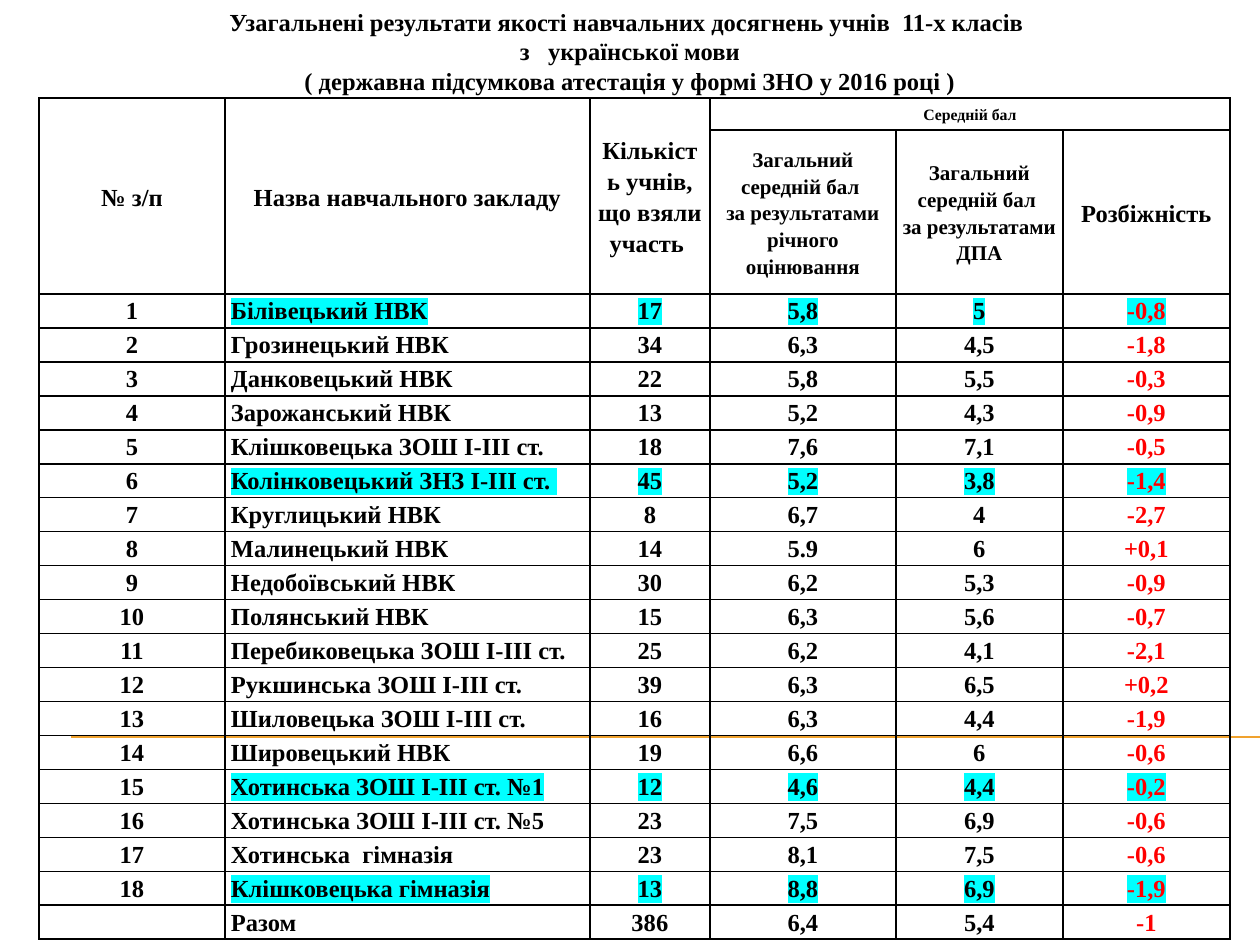
from lxml.etree import SubElement
from pptx import Presentation
from pptx.dml.color import RGBColor
from pptx.enum.shapes import MSO_CONNECTOR as CONN
from pptx.enum.text import MSO_ANCHOR as ANCHOR, PP_ALIGN as ALIGN
from pptx.oxml.ns import qn
from pptx.util import Emu, Pt


def px(n):
    return Emu(round(n * 914400 / 126))


def write(tf, text, size=14, color="000000", align=ALIGN.CENTER, spacing=1.15, mark=False):
    for i, line in enumerate(text.split("\n")):
        p = tf.paragraphs[0] if i == 0 else tf.add_paragraph()
        p.alignment, p.line_spacing = align, spacing
        if not line:
            SubElement(p._p, qn("a:endParaRPr"), sz=str(size * 100))
            continue
        r = p.add_run()
        r.text = line
        for key, value in {"name": "Times New Roman", "size": Pt(size), "bold": True}.items():
            setattr(r.font, key, value)
        r.font.color.rgb = RGBColor.from_string(color)
        if mark:
            rPr = r._r.get_or_add_rPr()
            hl = SubElement(rPr, qn("a:highlight"))
            SubElement(hl, qn("a:srgbClr"), val="00FFFF")
            rPr.find(qn("a:solidFill")).addnext(hl)


prs = Presentation()
prs.slide_width, prs.slide_height = px(1260), px(945)
s = prs.slides.add_slide(prs.slide_layouts[6])

rule = s.shapes.add_connector(CONN.STRAIGHT, px(71), px(737), px(1260), px(737))
rule.line.color.rgb = RGBColor.from_string("F0A22E")
rule.line.width = Pt(0.75)
SubElement(rule._element.spPr, qn("a:effectLst"))

title = s.shapes.add_textbox(0, 0, px(1260), px(102))
tf = title.text_frame
tf.word_wrap = True
tf.vertical_anchor = ANCHOR.MIDDLE
write(tf, "Узагальнені результати якості навчальних досягнень учнів  11-х класів \n"
          "з   української мови\n"
          "( державна підсумкова атестація у формі ЗНО у 2016 році )", spacing=1.0)

headers = [
    (0, 0, "№ з/п", 14),
    (0, 1, "Назва навчального закладу", 14),
    (0, 2, "Кількість учнів, що взяли участь ", 14),
    (0, 3, "Середній бал", 9),
    (1, 3, "Загальний середній бал \nза результатами річного оцінювання", 12),
    (1, 4, "Загальний середній бал \nза результатами ДПА", 12),
    (1, 5, "Розбіжність", 14),
]
schools = [
    ("1", "Білівецький НВК", "17", "5,8", "5", "-0,8"),
    ("2", "Грозинецький НВК", "34", "6,3", "4,5", "-1,8"),
    ("3", "Данковецький НВК", "22", "5,8", "5,5", "-0,3"),
    ("4", "Зарожанський НВК", "13", "5,2", "4,3", "-0,9"),
    ("5", "Клішковецька ЗОШ І-ІІІ ст.", "18", "7,6", "7,1", "-0,5"),
    ("6", "Колінковецький ЗНЗ І-ІІІ ст. ", "45", "5,2", "3,8", "-1,4"),
    ("7", "Круглицький НВК", "8", "6,7", "4", "-2,7"),
    ("8", "Малинецький НВК", "14", "5.9", "6", "+0,1"),
    ("9", "Недобоївський НВК", "30", "6,2", "5,3", "-0,9"),
    ("10", "Полянський НВК", "15", "6,3", "5,6", "-0,7"),
    ("11", "Перебиковецька ЗОШ І-ІІІ ст.", "25", "6,2", "4,1", "-2,1"),
    ("12", "Рукшинська ЗОШ І-ІІІ ст.", "39", "6,3", "6,5", "+0,2"),
    ("13", "Шиловецька ЗОШ І-ІІІ ст.", "16", "6,3", "4,4", "-1,9"),
    ("14", "Шировецький НВК", "19", "6,6", "6", "-0,6"),
    ("15", "Хотинська ЗОШ І-ІІІ ст. №1", "12", "4,6", "4,4", "-0,2"),
    ("16", "Хотинська ЗОШ І-ІІІ ст. №5", "23", "7,5", "6,9", "-0,6"),
    ("17", "Хотинська  гімназія", "23", "8,1", "7,5", "-0,6"),
    ("18", "Клішковецька гімназія", "13", "8,8", "6,9", "-1,9"),
    ("", "Разом", "386", "6,4", "5,4", "-1"),
]
marked = {"1", "6", "15", "18"}
widths = [186, 365, 120, 186, 167, 167]
heights = [32, 164] + [33 if i % 6 == 5 else 34 for i in range(len(schools))]

frame = s.shapes.add_table(len(heights), len(widths), px(39), px(98),
                           px(sum(widths)), px(sum(heights)))
table = frame.table
table.first_row = table.horz_banding = False
for col, w in zip(table.columns, widths):
    col.width = px(w)
for row, h in zip(table.rows, heights):
    row.height = px(h)

margins = {"margin_left": px(6), "margin_right": px(6), "margin_top": 0, "margin_bottom": 0}
for cell in table.iter_cells():
    for key, value in margins.items():
        setattr(cell, key, value)
    tcPr = cell._tc.get_or_add_tcPr()
    for side in ("lnL", "lnR", "lnT", "lnB"):
        ln = SubElement(tcPr, qn("a:" + side), w=str(Pt(1)))
        SubElement(SubElement(ln, qn("a:solidFill")), qn("a:srgbClr"), val="000000")
    cell.fill.background()

for c in range(3):
    table.cell(0, c).merge(table.cell(1, c))
table.cell(0, 3).merge(table.cell(0, 5))
for r, c, text, size in headers:
    cell = table.cell(r, c)
    cell.vertical_anchor = ANCHOR.MIDDLE
    write(cell.text_frame, text, size)

for r, school in enumerate(schools, 2):
    for c, text in enumerate(school):
        write(table.cell(r, c).text_frame, text,
              color="FF0000" if c == 5 else "000000",
              align=ALIGN.LEFT if c == 1 else ALIGN.CENTER,
              mark=c > 0 and school[0] in marked)

prs.save("out.pptx")
